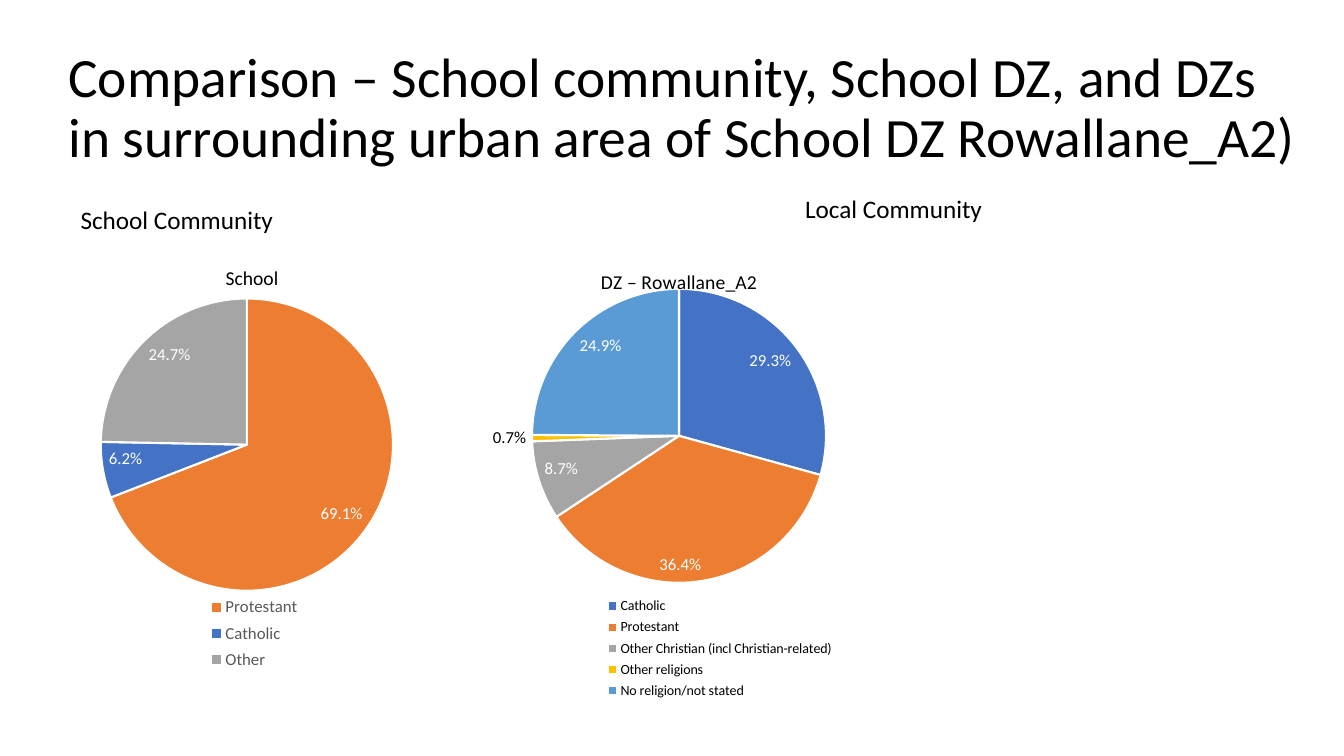
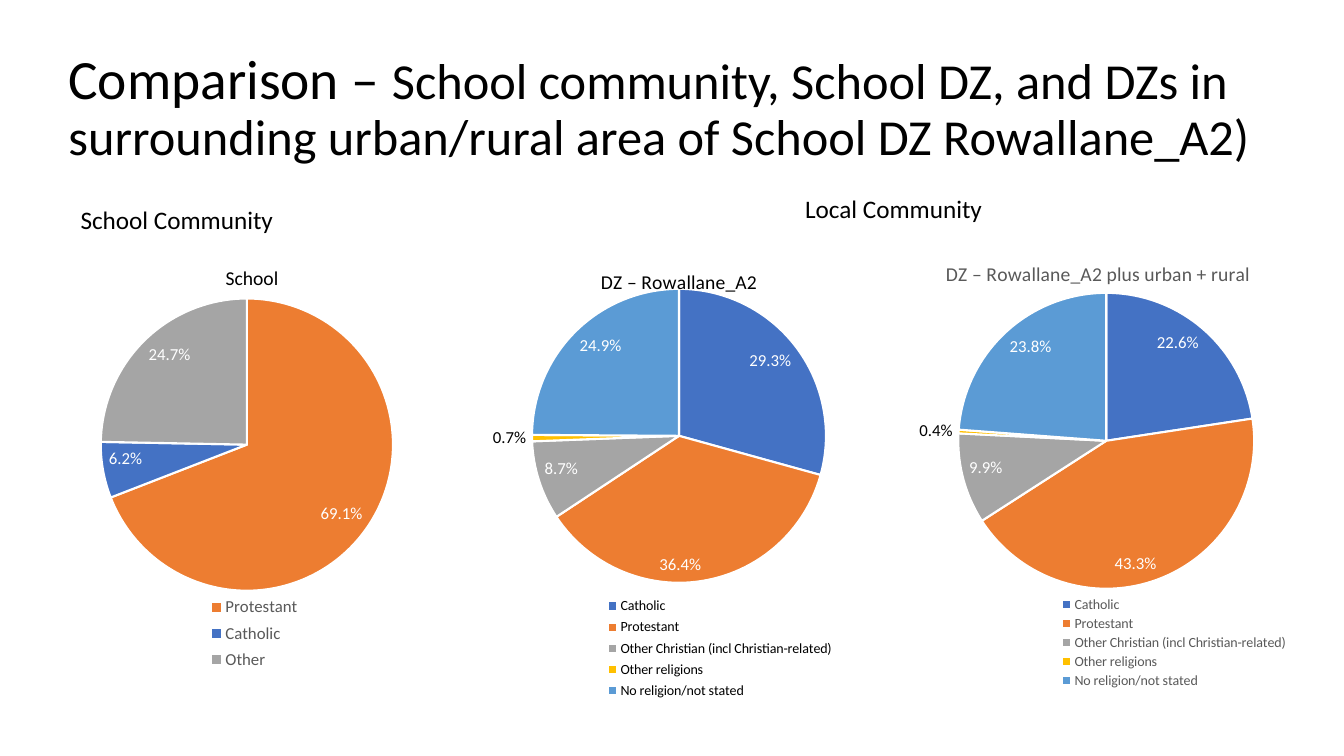
from lxml.etree import SubElement
from pptx import Presentation
from pptx.chart.data import CategoryChartData
from pptx.dml.color import RGBColor
from pptx.enum.chart import XL_CHART_TYPE as CT, XL_LABEL_POSITION as LP, XL_LEGEND_POSITION as LG
from pptx.enum.text import MSO_ANCHOR, MSO_AUTO_SIZE, PP_ALIGN
from pptx.oxml.ns import qn
from pptx.util import Cm, Pt

BLACK, GREY, WHITE = "000000", "595959", "FFFFFF"
BLUE, ORANGE, SILVER, GOLD, SKY = "4472C4", "ED7D31", "A5A5A5", "FFC000", "5B9BD5"
SCHOOL = {"Protestant": (69.1, ORANGE), "Catholic": (6.2, BLUE), "Other": (24.7, SILVER)}
GROUPS = {
    "Catholic": BLUE,
    "Protestant": ORANGE,
    "Other Christian (incl Christian-related)": SILVER,
    "Other religions": GOLD,
    "No religion/not stated": SKY,
}


def rgb(value):
    return RGBColor.from_string(value)


def local(*shares):
    return {name: (share, GROUPS[name]) for name, share in zip(GROUPS, shares)}


def place(parent, index, box, inner=False):
    for old in parent.findall(qn("c:layout")):
        parent.remove(old)
    layout = SubElement(parent, qn("c:layout"))
    parent.insert(index, layout)
    manual = SubElement(layout, qn("c:manualLayout"))
    settings = [("layoutTarget", "inner")] if inner else []
    settings += [("xMode", "edge"), ("yMode", "edge")]
    settings += zip("xywh", box)
    for tag, value in settings:
        SubElement(manual, qn("c:" + tag)).set("val", str(value))


class Deck:
    font = "Calibri"

    def __init__(self):
        self.prs = Presentation()
        self.prs.slide_width, self.prs.slide_height = Cm(33.87), Cm(19.05)
        self.s = None

    def style(self, font, size, color=BLACK):
        font.name, font.size, font.bold = self.font, Pt(size), False
        font.color.rgb = rgb(color)

    def slide(self, *parts):
        self.s = self.prs.slides.add_slide(self.prs.slide_layouts[5])
        sp = self.s.shapes.title
        sp.left, sp.top, sp.width, sp.height = Cm(1.47), Cm(0.91), Cm(31.55), Cm(3.68)
        tf = sp.text_frame
        tf.vertical_anchor, tf.auto_size = MSO_ANCHOR.MIDDLE, MSO_AUTO_SIZE.NONE
        p = tf.paragraphs[0]
        p.alignment, p.line_spacing = PP_ALIGN.LEFT, 0.9
        for text, size in parts:
            r = p.add_run()
            r.text = text
            self.style(r.font, size)

    def text(self, box, text, size, align=PP_ALIGN.LEFT):
        tf = self.s.shapes.add_textbox(*map(Cm, box)).text_frame
        tf.word_wrap = True
        tf.text = text
        p = tf.paragraphs[0]
        p.alignment = align
        self.style(p.runs[0].font, size)

    def pie(self, box, data, plot, legend, legend_size, color=GREY, title=None, title_at=None):
        cd = CategoryChartData(number_format='0.0"%"')
        cd.categories = list(data)
        cd.add_series("Series 1", [share for share, _ in data.values()])
        chart = self.s.shapes.add_chart(CT.PIE, *map(Cm, box), cd).chart
        self.style(chart.font, 10)
        chart.has_title = title is not None
        if title:
            tf = chart.chart_title.text_frame
            tf.text = title
            self.style(tf.paragraphs[0].runs[0].font, 14, color)
            place(chart.element.xpath(".//c:title")[0], 1, title_at)
        chart.has_legend = True
        chart.legend.position = LG.BOTTOM
        chart.legend.include_in_layout = False
        self.style(chart.legend.font, legend_size, color)
        place(chart.element.xpath(".//c:legend")[0], 1, legend)
        place(chart.element.xpath(".//c:plotArea")[0], 0, plot, inner=True)

        series = chart.plots[0].series[0]
        labels = series.data_labels
        labels.show_value, labels.position = True, LP.INSIDE_END
        labels.number_format, labels.number_format_is_linked = '0.0"%"', False
        self.style(labels.font, 12, WHITE)
        for i, (share, fill) in enumerate(data.values()):
            point = series.points[i]
            point.format.fill.solid()
            point.format.fill.fore_color.rgb = rgb(fill)
            point.format.line.color.rgb = rgb(WHITE)
            point.format.line.width = Pt(1.5)
            if share < 1:
                self.style(point.data_label.font, 12)
                point.data_label.position = LP.OUTSIDE_END

    def comparison(self, *title):
        self.slide(*title)
        self.pie((0, 7.09, 12.7, 10.69), SCHOOL, (0.2, 0.04, 0.58, 0.69),
                 (0.41, 0.73, 0.19, 0.2), 12)
        self.text((3.91, 6.58, 4.88, 0.86), "School", 14, PP_ALIGN.CENTER)
        self.text((1.78, 5.03, 6.83, 1.02), "School Community", 18)
        self.text((20.04, 4.75, 6.83, 1.02), "Local Community", 18)
        self.pie((10.39, 5.69, 13.72, 12.17), local(29.3, 36.4, 8.7, 0.7, 24.9),
                 (0.22, 0.13, 0.54, 0.61), (0.35, 0.76, 0.43, 0.23), 10, BLACK,
                 "DZ – Rowallane_A2", (0.34, 0.08))


def main():
    deck = Deck()
    deck.comparison(("Comparison – School community, School DZ, and DZs in surrounding "
                     "urban area of School DZ Rowallane_A2)", 39.6))
    deck.comparison(("Comparison – ", 39.6),
                    ("School community, School DZ, and DZs in surrounding "
                     "urban/rural area of School DZ Rowallane_A2)", 36))
    deck.pie((21.39, 6.25, 13.11, 11.3), local(22.6, 43.3, 9.9, 0.4, 23.8),
             (0.21, 0.1, 0.57, 0.66), (0.4, 0.77, 0.45, 0.22), 10,
             title="DZ – Rowallane_A2 plus urban + rural", title_at=(0.18, 0.02))
    deck.prs.save("out.pptx")


if __name__ == "__main__":
    main()
